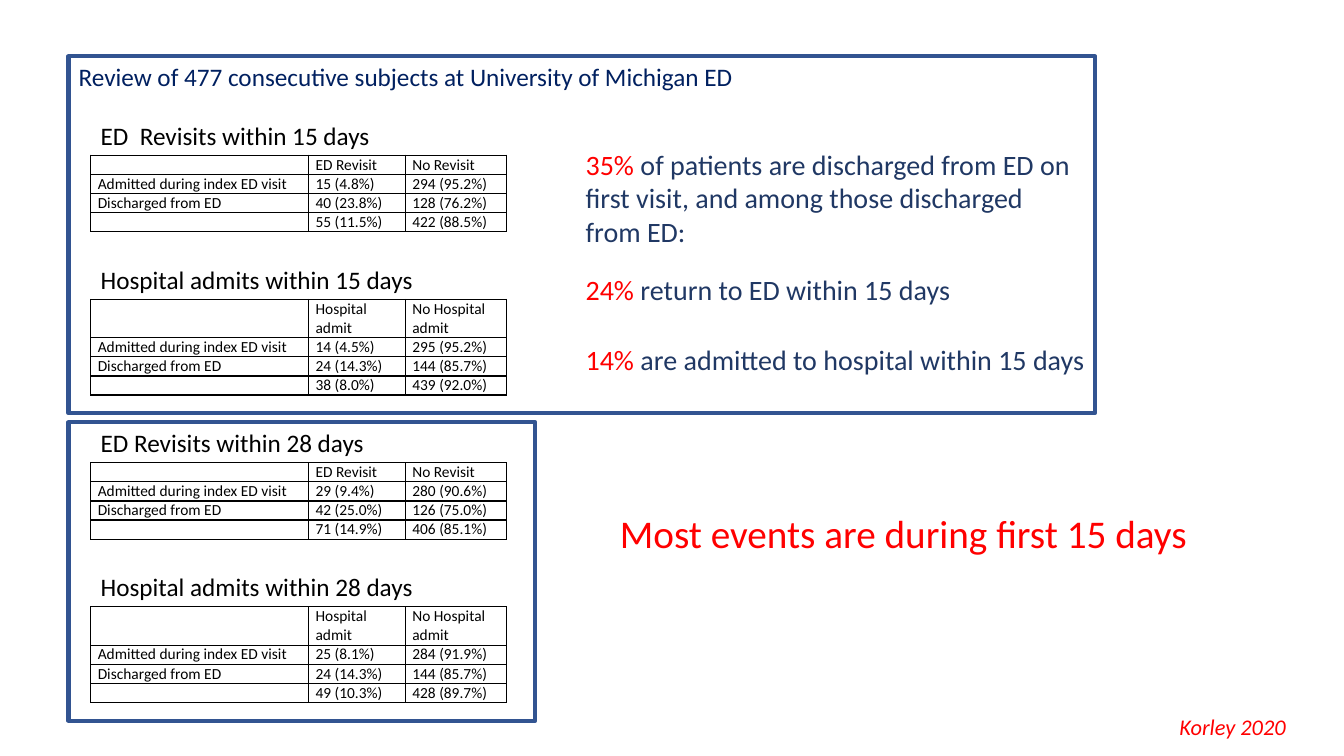
from lxml.etree import SubElement
from pptx import Presentation
from pptx.dml.color import RGBColor
from pptx.enum.shapes import MSO_SHAPE as Shape
from pptx.enum.text import MSO_ANCHOR as Anchor, MSO_AUTO_SIZE as AutoSize, PP_ALIGN as Align
from pptx.oxml.ns import qn
from pptx.util import Inches, Pt

BLACK, RED, NAVY, SLATE, FRAME = "000000", "FF0000", "002060", "203864", "325491"
COLUMN_WIDTHS = (2.16, 0.96, 1)
LINE_HEIGHT = 0.19
TABLE_PITCH = 1.43
HEADING_HEIGHT = 0.4
ROW_LABELS = ("Admitted during index ED visit", "Discharged from ED", "")
REVISIT_HEADER = ("", "ED Revisit", "No Revisit")
ADMIT_HEADER = ("", "Hospital admit", "No Hospital admit")

DAYS_15 = (
    ("ED  Revisits within 15 days", REVISIT_HEADER, 1,
     (("15 (4.8%)", "294 (95.2%)"), ("40 (23.8%)", "128 (76.2%)"), ("55 (11.5%)", "422 (88.5%)"))),
    ("Hospital admits within 15 days", ADMIT_HEADER, 2,
     (("14 (4.5%)", "295 (95.2%)"), ("24 (14.3%)", "144 (85.7%)"), ("38 (8.0%)", "439 (92.0%)"))),
)
DAYS_28 = (
    ("ED Revisits within 28 days", REVISIT_HEADER, 1,
     (("29 (9.4%)", "280 (90.6%)"), ("42 (25.0%)", "126 (75.0%)"), ("71 (14.9%)", "406 (85.1%)"))),
    ("Hospital admits within 28 days", ADMIT_HEADER, 2,
     (("25 (8.1%)", "284 (91.9%)"), ("24 (14.3%)", "144 (85.7%)"), ("49 (10.3%)", "428 (89.7%)"))),
)
FINDINGS = (
    (0, 1.11, "35% ", "of patients are discharged from ED on first visit, "
                      "and among those discharged from ED:"),
    (1.24, 0.44, "24% ", "return to ED within 15 days"),
    (1.94, 0.44, "14% ", "are admitted to hospital within 15 days"),
)


def rgb(value):
    return RGBColor.from_string(value)


def apply(target, values):
    for key, value in values.items():
        setattr(target, key, value)


def write(frame, pieces, size, italic=False, wrap=False):
    apply(frame, {"word_wrap": wrap, "auto_size": AutoSize.NONE, "vertical_anchor": Anchor.TOP})
    paragraph = frame.paragraphs[0]
    paragraph.alignment = Align.LEFT
    for text, color in pieces:
        run = paragraph.add_run()
        run.text = text
        apply(run.font, {"name": "Calibri", "size": Pt(size), "italic": italic})
        run.font.color.rgb = rgb(color)


def add_text(slide, box, pieces, size, **options):
    label = slide.shapes.add_textbox(*map(Inches, box))
    write(label.text_frame, pieces, size, **options)


def add_title(slide, box, text):
    title = slide.shapes.title
    left, top, width, height = map(Inches, box)
    apply(title, {"left": left, "top": top, "width": width, "height": height})
    write(title.text_frame, [(text, NAVY)], 18)


def format_cell(cell, text):
    apply(cell, {"margin_left": Inches(0.07), "margin_right": Inches(0.07),
                 "margin_top": 0, "margin_bottom": 0})
    paragraph = cell.text_frame.paragraphs[0]
    if text:
        run = paragraph.add_run()
        run.text = text
        apply(run.font, {"name": "Calibri", "size": Pt(11)})
        run.font.color.rgb = rgb(BLACK)
    SubElement(paragraph._p, qn("a:endParaRPr"), sz="1100")
    properties = cell._tc.get_or_add_tcPr()
    for side in ("a:lnL", "a:lnR", "a:lnT", "a:lnB"):
        border = SubElement(properties, qn(side), w=str(Pt(1)))
        SubElement(SubElement(border, qn("a:solidFill")), qn("a:srgbClr"), val=BLACK)
    cell.fill.background()


def add_counts(slide, left, top, header, header_lines, counts):
    rows = [header] + [(label, *pair) for label, pair in zip(ROW_LABELS, counts)]
    heights = [LINE_HEIGHT * header_lines] + [LINE_HEIGHT] * len(counts)
    box = (left, top, sum(COLUMN_WIDTHS), sum(heights))
    table = slide.shapes.add_table(len(rows), len(header), *map(Inches, box)).table
    apply(table, {"first_row": False, "horz_banding": False})
    for column, width in zip(table.columns, COLUMN_WIDTHS):
        column.width = Inches(width)
    for table_row, height, texts in zip(table.rows, heights, rows):
        table_row.height = Inches(height)
        for cell, text in zip(table_row.cells, texts):
            format_cell(cell, text)


def add_period(slide, box, tables_top, period):
    left, top = box[0] + 0.22, box[1] + tables_top
    for index, (heading, header, header_lines, counts) in enumerate(period):
        table_top = top + index * TABLE_PITCH
        add_counts(slide, left, table_top, header, header_lines, counts)
        add_text(slide, (left, table_top - HEADING_HEIGHT, 3.33, HEADING_HEIGHT),
                 [(heading, BLACK)], 18)
    frame = slide.shapes.add_shape(Shape.RECTANGLE, *map(Inches, box))
    frame.shadow.inherit = False
    frame.fill.background()
    frame.line.color.rgb = rgb(FRAME)
    frame.line.width = Pt(3)


def add_findings(slide, box):
    left, top, width = box
    for offset, height, share, finding in FINDINGS:
        add_text(slide, (left, top + offset, width, height),
                 [(share, RED), (finding, SLATE)], 20, wrap=offset == 0)


def main():
    deck = Presentation()
    apply(deck, {"slide_width": Inches(13.33), "slide_height": Inches(7.5)})
    slide = deck.slides.add_slide(deck.slide_layouts[5])
    add_title(slide, (0.68, 0.56, 6.77, 0.4),
              "Review of 477 consecutive subjects at University of Michigan ED")
    add_period(slide, (0.68, 0.56, 10.18, 3.54), 0.98, DAYS_15)
    add_period(slide, (0.68, 4.19, 4.63, 2.96), 0.4, DAYS_28)
    add_findings(slide, (5.71, 1.41, 5.01))
    add_text(slide, (6.05, 5, 5.89, 0.57), [("Most events are during first 15 days", RED)], 28)
    add_text(slide, (11.6, 7.03, 1.27, 0.37), [("Korley 2020", RED)], 16, italic=True)
    deck.save("out.pptx")


if __name__ == "__main__":
    main()
